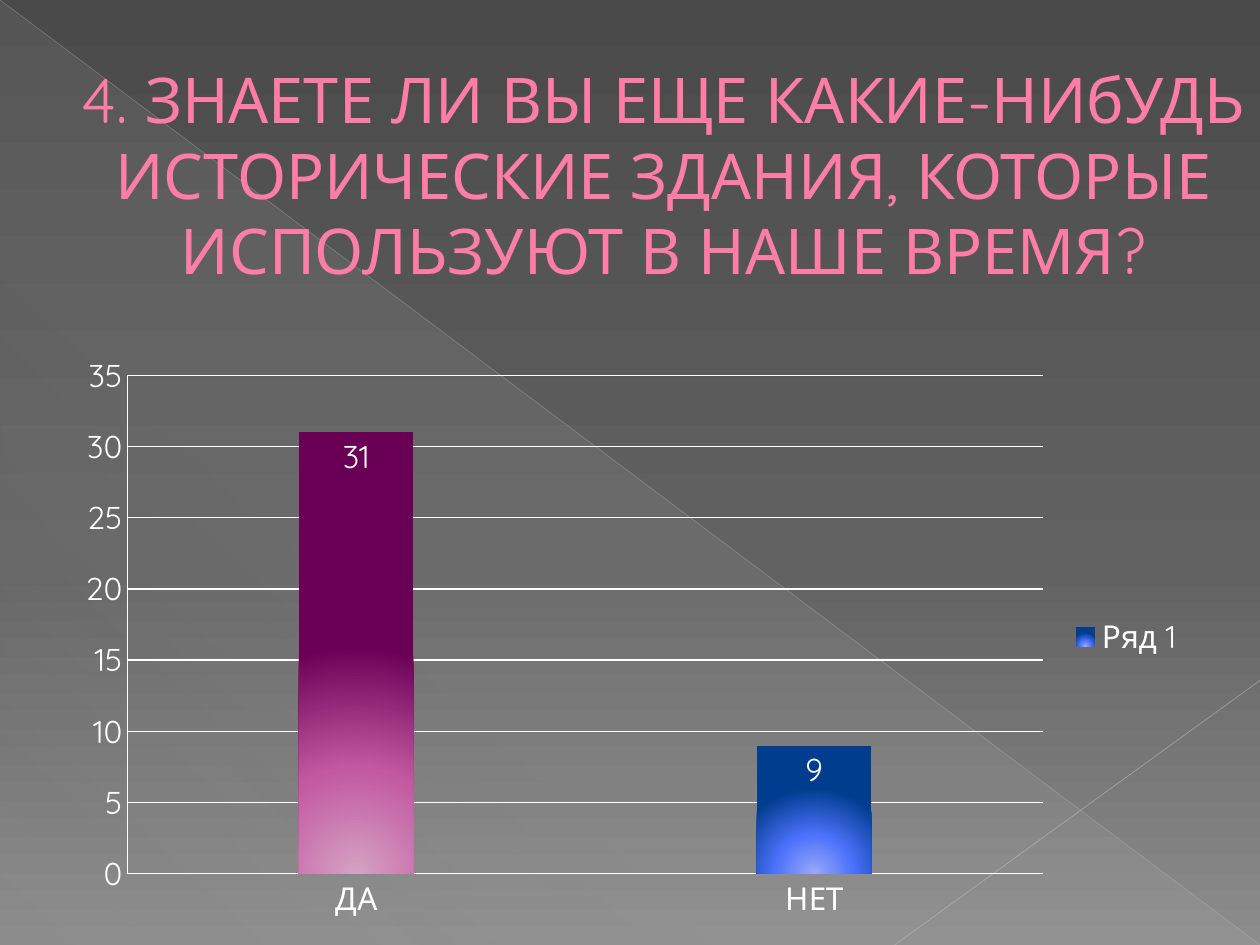
"""Build a survey slide with a title and a stacked column chart."""
from lxml import etree
from pptx import Presentation
from pptx.chart.data import CategoryChartData
from pptx.dml.color import RGBColor
from pptx.enum.chart import XL_CHART_TYPE, XL_LABEL_POSITION, XL_LEGEND_POSITION, XL_TICK_MARK
from pptx.enum.shapes import MSO_CONNECTOR, MSO_SHAPE
from pptx.enum.text import MSO_ANCHOR, PP_ALIGN
from pptx.oxml.ns import qn
from pptx.util import Inches, Pt

COLUMN = XL_CHART_TYPE.COLUMN_STACKED
INSIDE_END = XL_LABEL_POSITION.INSIDE_END
RIGHT = XL_LEGEND_POSITION.RIGHT
NO_TICK = XL_TICK_MARK.NONE
STRAIGHT = MSO_CONNECTOR.STRAIGHT
TRIANGLE = MSO_SHAPE.RIGHT_TRIANGLE
MIDDLE = MSO_ANCHOR.MIDDLE
CENTER = PP_ALIGN.CENTER

FONT = "Quicksand"
COLORS = {
    "text": "FFFFFF",
    "title": "FF7DA7",
    "long_line": "BFBFBF",
    "short_line": "C6C6C6",
}
GRADIENTS = {
    "page": [(0, "4A4A4A", 100), (60, "626262", 100), (100, "8C8C8C", 100)],
    "veil": [(0, "D2D2D2", 10), (70, "D2D2D2", 8), (100, "D2D2D2", 1)],
    "blue": [(0, "9AAAF8", 100), (46, "4C71FB", 100), (100, "003D8E", 100)],
    "plum": [(0, "D5A2C3", 100), (46, "C259A1", 100), (100, "690055", 100)],
}


def set_alpha(color, percent):
    etree.SubElement(color, qn("a:alpha"), val=str(percent * 1000))


def paint_gradient(fill, owner, where, stops, angle=None):
    fill.gradient()
    gradient = owner.xpath(where + "/a:gradFill")[0]
    for child in list(gradient):
        gradient.remove(child)
    stop_list = etree.SubElement(gradient, qn("a:gsLst"))
    for position, color, opacity in stops:
        stop = etree.SubElement(stop_list, qn("a:gs"), pos=str(position * 1000))
        set_alpha(etree.SubElement(stop, qn("a:srgbClr"), val=color), opacity)
    if angle is None:
        circle = etree.SubElement(gradient, qn("a:path"), path="circle")
        etree.SubElement(circle, qn("a:fillToRect"), l="50000", t="155000", r="50000", b="-55000")
    else:
        etree.SubElement(gradient, qn("a:lin"), ang=str(angle * 60000), scaled="0")


deck = Presentation()
deck.slide_width, deck.slide_height = Inches(10), Inches(7.5)
width, height = deck.slide_width, deck.slide_height
page = deck.slides.add_slide(deck.slide_layouts[6])
paint_gradient(page.background.fill, page.element, ".//p:bgPr", GRADIENTS["page"], 90)

veil = page.shapes.add_shape(TRIANGLE, 0, 0, width, height)
veil.shadow.inherit = False
veil.line.fill.background()
paint_gradient(veil.fill, veil.element, "./p:spPr", GRADIENTS["veil"], 133)

diagonals = [
    ((0, 0), (1, 1), "long_line", 0.39, 35),
    ((1, 0.72), (0.71, 1), "short_line", 0.47, 45),
]
for (x1, y1), (x2, y2), color, weight, opacity in diagonals:
    diagonal = page.shapes.add_connector(
        STRAIGHT, int(x1 * width), int(y1 * height), int(x2 * width), int(y2 * height)
    )
    diagonal.line.width = Pt(weight)
    diagonal.line.color.rgb = RGBColor.from_string(COLORS[color])
    set_alpha(diagonal.element.xpath("./p:spPr/a:ln//a:srgbClr")[0], opacity)
    etree.SubElement(diagonal.element.spPr, qn("a:effectLst"))

title_box = page.shapes.add_textbox(0, Inches(0.36), width, Inches(2.04))
title_frame = title_box.text_frame
title_frame.word_wrap = True
title_frame.vertical_anchor = MIDDLE
para = title_frame.paragraphs[0]
para.text = "4. ЗНАЕТЕ ЛИ ВЫ ЕЩЕ КАКИЕ-НИбУДЬ ИСТОРИЧЕСКИЕ ЗДАНИЯ, КОТОРЫЕ ИСПОЛЬЗУЮТ В НАШЕ ВРЕМЯ?"
para.alignment = CENTER
para.font.name = FONT
para.font.size = Pt(36)
para.font.color.rgb = RGBColor.from_string(COLORS["title"])
para._p.get_or_add_pPr().set("marL", str(Inches(0.53)))

answers = CategoryChartData()
answers.categories = ["ДА", "НЕТ"]
answers.add_series("Ряд 1", [31, 9])
chart = page.shapes.add_chart(
    COLUMN, int(0.05 * width), Inches(2.73), int(0.9 * width), Inches(4.65), answers
).chart
white = RGBColor.from_string(COLORS["text"])
chart.font.name = FONT
chart.font.size = Pt(18)
chart.font.color.rgb = white
chart.has_title = False
chart.has_legend = True
chart.legend.position = RIGHT
chart.legend.include_in_layout = False

chart.value_axis.has_major_gridlines = True
chart.value_axis.maximum_scale = 35
chart.value_axis.major_unit = 5
axes = [chart.category_axis, chart.value_axis]
for line in [axis.format.line for axis in axes] + [chart.value_axis.major_gridlines.format.line]:
    line.color.rgb = white
    line.width = Pt(0.75)
for axis in axes:
    axis.major_tick_mark = NO_TICK
    axis.minor_tick_mark = NO_TICK

plot = chart.plots[0]
plot.vary_by_categories = False
plot.gap_width = 300
plot.overlap = 100
series = plot.series[0]
series.invert_if_negative = False
paint_gradient(series.format.fill, series._element, "./c:spPr", GRADIENTS["blue"])
paint_gradient(series.points[0].format.fill, series._element, "./c:dPt/c:spPr", GRADIENTS["plum"])
labels = series.data_labels
labels.show_value = True
labels.position = INSIDE_END

deck.save("out.pptx")
